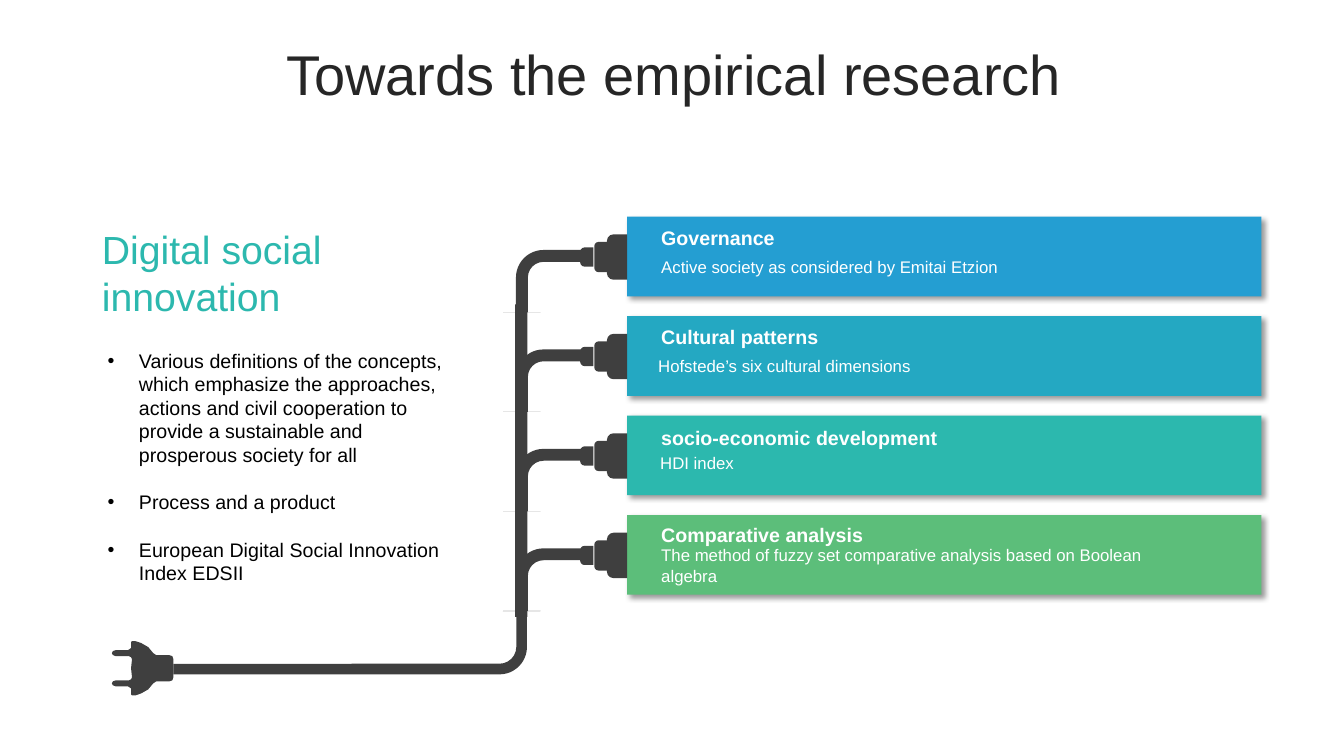
from lxml.etree import SubElement
from pptx import Presentation
from pptx.dml.color import RGBColor
from pptx.enum.shapes import MSO_SHAPE
from pptx.enum.text import MSO_ANCHOR, MSO_AUTO_SIZE, PP_ALIGN
from pptx.oxml.ns import qn
from pptx.util import Inches, Pt

DARK = "3F3F3F"
WHITE = "FFFFFF"
TEAL = "2CB8AE"
STEP = 2.96 / 3  # distance from one bar to the next


def color(code):
    return RGBColor.from_string(code)


class Page:
    font = "Arial"

    def __init__(self, deck):
        self.slide = deck.slides.add_slide(deck.slide_layouts[6])

    def paint(self, item, fill):
        item.shadow.inherit = False
        item.fill.solid()
        item.fill.fore_color.rgb = color(fill)
        item.line.fill.background()
        return item

    def shape(self, kind, box, fill, turn=0, adjust=(), flip=False):
        item = self.slide.shapes.add_shape(kind, *map(Inches, box))
        item.rotation = turn
        for i, value in enumerate(adjust):
            item.adjustments[i] = value
        if flip:
            item._element.spPr.find(qn("a:xfrm")).set("flipH", "1")
        return self.paint(item, fill)

    def outline(self, points, fill):
        spots = [(Inches(x), Inches(y)) for x, y in points]
        maker = self.slide.shapes.build_freeform(*spots[0])
        maker.add_line_segments(spots[1:], close=True)
        return self.paint(maker.convert_to_shape(), fill)

    def shade(self, item):
        effects = item._element.spPr.find(qn("a:effectLst"))
        outer = SubElement(effects, qn("a:outerShdw"), blurRad=str(Pt(4)),
                           dist=str(Pt(3)), dir="2700000", algn="tl", rotWithShape="0")
        tone = SubElement(outer, qn("a:srgbClr"), val="000000")
        SubElement(tone, qn("a:alpha"), val="40000")

    def text(self, box, words, size, tint, bold=False, middle=False):
        item = self.slide.shapes.add_textbox(*map(Inches, box))
        frame = item.text_frame
        frame.word_wrap = True
        frame.text = words
        if middle:
            frame.vertical_anchor = MSO_ANCHOR.MIDDLE
        else:
            frame.auto_size = MSO_AUTO_SIZE.SHAPE_TO_FIT_TEXT
        for para in frame.paragraphs:
            for run in para.runs:
                run.font.name = self.font
                run.font.size = Pt(size)
                run.font.bold = bold
                run.font.color.rgb = color(tint)
        return frame

    def bullets(self, box, lines, size, tint, gap):
        frame = self.text(box, "\n".join(lines), size, tint)
        for i, para in enumerate(frame.paragraphs):
            props = para._p.get_or_add_pPr()
            props.set("marL", str(Inches(0.31)))
            props.set("indent", str(-Inches(0.31)))
            SubElement(props, qn("a:buFont"), typeface=self.font)
            SubElement(props, qn("a:buChar"), char="•")
            if i:
                para.space_before = Pt(gap)

    def socket(self, mid):
        # Three stepped blocks, wide to narrow, facing left
        for x, tall, deep in ((6.12, 0.45, 0.2), (5.96, 0.3, 0.13), (5.82, 0.19, 0.13)):
            box = (x - tall / 2, mid - deep / 2, tall, deep)
            self.shape(MSO_SHAPE.ROUND_2_SAME_RECTANGLE, box, DARK, 270, (0.32, 0))

    def bend(self, box, turn, width):
        self.shape(MSO_SHAPE.BENT_ARROW, box, DARK, turn, (width, 0.3, 0, 0.44), True)


def main():
    deck = Presentation()
    deck.slide_width, deck.slide_height = Inches(13.33), Inches(7.5)
    page = Page(deck)

    # Title
    title = page.text((0.35, 0.37, 12.66, 0.79), "Towards the empirical research",
                      40, "262626", middle=True)
    title.paragraphs[0].alignment = PP_ALIGN.CENTER
    title.paragraphs[0].line_spacing = 0.9

    # Bars: fill, heading and its top, detail with its left and top
    bars = [
        ("249ED2", "Governance", 2.19,
         "Active society as considered by Emitai Etzion", 6.46, 2.5),
        ("24A8C2", "Cultural patterns", 3.17,
         "Hofstede’s six cultural dimensions", 6.43, 3.48),
        (TEAL, "socio-economic development", 4.18, "HDI index", 6.45, 4.44),
        ("5CBE7A", "Comparative analysis", 5.14,
         "The method of fuzzy set comparative analysis based on Boolean algebra", 6.46, 5.36),
    ]
    for i, (fill, head, top, detail, left, low) in enumerate(bars):
        drop = i * STEP
        bar = page.shape(MSO_SHAPE.RECTANGLE, (6.22, 2.15 + drop, 6.29, 0.79), fill)
        page.shade(bar)
        page.text((6.46, top, 5.13, 0.34), head, 14, WHITE, bold=True)
        page.text((left, low, 5.13, 0.3), detail, 12, WHITE)
        page.bend((5.07, 2.4 + drop, 0.62, 0.78), 270, 0.19)
        page.socket(2.55 + drop)

    # Main cable
    page.bend((3.23, 4.56, 0.62, 3.64), 90, 0.17)
    page.shape(MSO_SHAPE.RECTANGLE, (5.11, 3.02, 0.12, 3.1), DARK)

    # Plug: upper half as x and height above the axis, then mirrored
    axis = 6.63
    half = [(1.3, 0), (1.31, 0.09), (1.3, 0.11), (1.28, 0.12), (1.15, 0.12), (1.12, 0.13),
            (1.11, 0.15), (1.12, 0.17), (1.15, 0.18), (1.27, 0.18), (1.3, 0.2),
            (1.3, 0.26), (1.31, 0.27), (1.34, 0.27), (1.4, 0.25), (1.47, 0.21),
            (1.52, 0.15), (1.55, 0.13), (1.68, 0.13), (1.71, 0.12), (1.72, 0.09)]
    upper = [(x, axis - y) for x, y in half]
    lower = [(x, axis + y) for x, y in reversed(half[1:])]
    page.outline(upper + lower, DARK)

    # Left column
    page.bullets((0.97, 3.41, 3.71, 2.46), [
        "Various definitions of the concepts, which emphasize the approaches, actions "
        "and civil cooperation to provide a sustainable and prosperous society for all",
        "Process and a product",
        "European Digital Social Innovation Index EDSII",
    ], 14, "000000", 17)
    topic = page.text((0.97, 2.23, 3.71, 0.94), "Digital social innovation",
                      28, TEAL, middle=True)
    topic.margin_left = topic.margin_right = Inches(0.04)
    topic.margin_top = topic.margin_bottom = 0

    deck.save("out.pptx")


if __name__ == "__main__":
    main()
